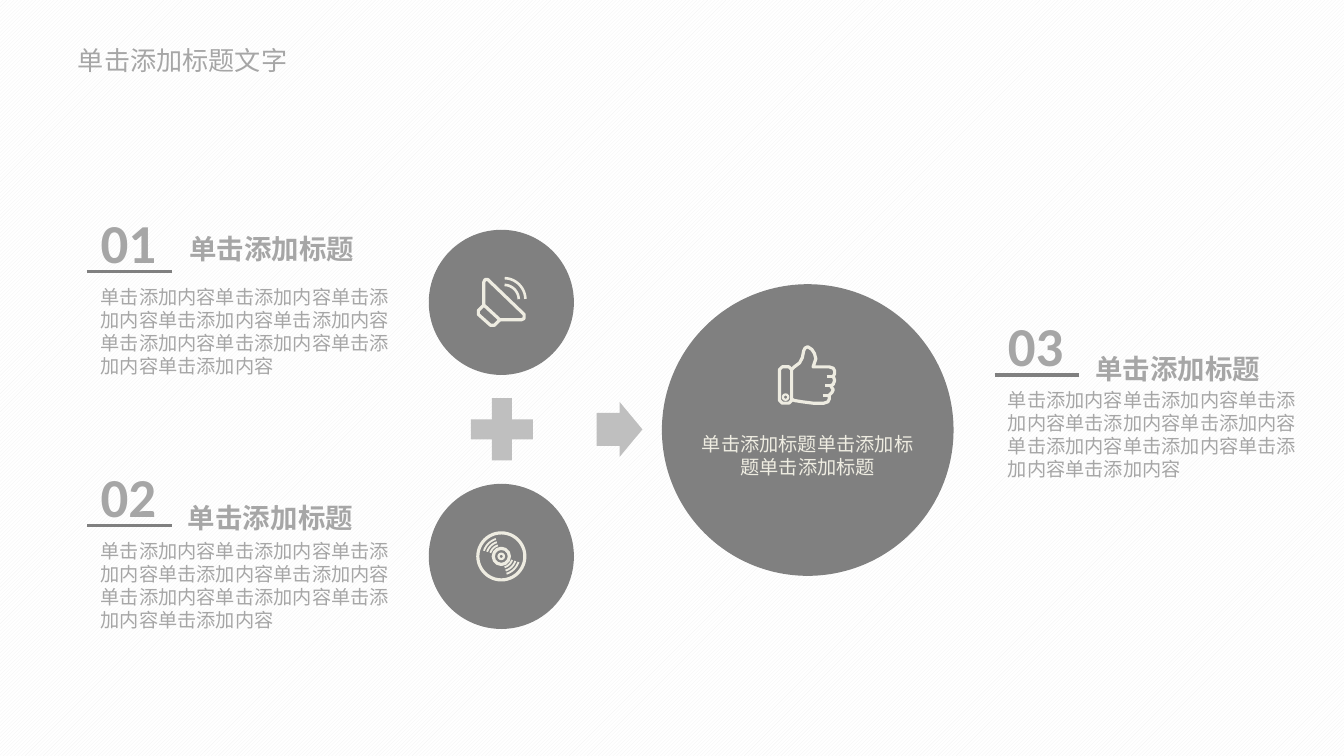
from math import cos, radians, sin
from pptx import Presentation, util as u
from pptx.dml.color import RGBColor
from pptx.enum import dml, shapes, text
from pptx.oxml.ns import qn

W = 10
H = W * 9 / 16
DARK, MID, GRAY, CREAM = "808080", "BFBFBF", "A6A6A6", "EEECE1"
BODY = "单击添加内容" * 9
HEADING = "单击添加标题"
CALIBRI = dict(name="Calibri")
TITLE = dict(name="Noto Sans CJK SC", size=14)
NUMBER = dict(CALIBRI, size=29.4, bold=True)
HEAD = dict(CALIBRI, size=14.7, bold=True)
SMALL = dict(CALIBRI, size=10.3)

# number, left, top, heading offset across and down
ITEMS = [
    ("01", 0.65, 1.5, 0.66, 0.18),
    ("02", 0.65, 3.39, 0.65, 0.29),
    ("03", 7.4, 2.27, 0.65, 0.3),
]
CIRCLES = [(3.73, 2.25, 0.54), (3.73, 4.14, 0.54), (6.01, 3.2, 1.085)]
RINGS = [(3.73, 4.14, 0.175, 1.7), (3.73, 4.14, 0.06, 1.7),
         (3.73, 4.14, 0.02, 1.2), (5.845, 2.955, 0.02, 1.2)]
ARCS = [(3.75, 2.23, r, 272, 358, 1.4) for r in (0.11, 0.16)]
ARCS += [(3.73, 4.14, r, a, a + 55, 1)
         for r in (0.085, 0.11, 0.135) for a in (18, 198)]
SPEAKER = [
    ([(3.6, 2.27), (3.6, 2.1), (3.61, 2.08), (3.63, 2.08), (3.64, 2.09),
      (3.9, 2.34), (3.9, 2.37), (3.88, 2.38), (3.72, 2.38)], True),
    ([(3.6, 2.27), (3.56, 2.31), (3.56, 2.34), (3.65, 2.42), (3.68, 2.42),
      (3.72, 2.38)], False),
]
THUMB = [
    ([(5.82, 2.73), (5.87, 2.73), (5.89, 2.75), (5.89, 2.98), (5.87, 3),
      (5.82, 3), (5.8, 2.98), (5.8, 2.75)], True),
    ([(5.89, 2.75), (5.91, 2.73), (5.95, 2.7), (5.97, 2.66), (5.98, 2.61),
      (5.99, 2.59), (6.01, 2.58), (6.04, 2.6), (6.06, 2.63), (6.07, 2.67),
      (6.05, 2.73), (6.17, 2.73), (6.2, 2.74), (6.21, 2.76), (6.21, 2.78),
      (6.2, 2.8), (6.21, 2.83), (6.2, 2.86), (6.18, 2.87), (6.2, 2.9),
      (6.19, 2.92), (6.17, 2.94), (6.17, 2.97), (6.16, 2.99), (6.13, 3),
      (6.05, 3), (5.97, 2.99), (5.91, 2.98), (5.89, 2.97)], False),
    ([(6.15, 2.8), (6.2, 2.8)], False),
    ([(6.14, 2.87), (6.18, 2.87)], False),
    ([(6.12, 2.94), (6.17, 2.94)], False),
]


def color(value):
    return RGBColor.from_string(value)


def paint(sp, fill=None, line=None, width=1.7):
    sp.shadow.inherit = False
    if fill:
        sp.fill.solid()
        sp.fill.fore_color.rgb = color(fill)
    else:
        sp.fill.background()
    if line:
        sp.line.color.rgb = color(line)
        sp.line.width = u.Pt(width)
    else:
        sp.line.fill.background()


def preset(kind, x, y, w, h, **style):
    sp = s.shapes.add_shape(kind, *map(u.Inches, (x, y, w, h)))
    paint(sp, **style)
    return sp


def circle(cx, cy, r, **style):
    preset(shapes.MSO_SHAPE.OVAL, cx - r, cy - r, 2 * r, 2 * r, **style)


def stroke(points, close=False, width=1.7):
    points = [(u.Inches(x), u.Inches(y)) for x, y in points]
    fb = s.shapes.build_freeform(*points[0])
    fb.add_line_segments(points[1:], close=close)
    paint(fb.convert_to_shape(), line=CREAM, width=width)


def arc(cx, cy, r, start, end, width):
    angles = [radians(start + (end - start) * i / 16) for i in range(17)]
    stroke([(cx + r * cos(a), cy + r * sin(a)) for a in angles], width=width)


def write(words, x, y, w, h, fmt, ink=GRAY, wrap=False, **frame):
    tf = s.shapes.add_textbox(*map(u.Inches, (x, y, w, h))).text_frame
    tf.word_wrap = wrap
    for key, value in frame.items():
        setattr(tf, key, value)
    p = tf.paragraphs[0]
    r = p.add_run()
    r.text = words
    for key, value in fmt.items():
        setattr(r.font, key, u.Pt(value) if key == "size" else value)
    r.font.color.rgb = color(ink)
    ea = r.font._element.makeelement(qn("a:ea"), {"typeface": fmt["name"]})
    r.font._element.append(ea)
    return p


def rule(x, y, w):
    ln = s.shapes.add_connector(shapes.MSO_CONNECTOR.STRAIGHT,
                                *map(u.Inches, (x, y, x + w, y)))
    ln.line.color.rgb = color(DARK)
    ln.line.width = u.Pt(2)
    props = ln._element.spPr
    props.append(props.makeelement(qn("a:effectLst"), {}))


prs = Presentation()
prs.slide_width, prs.slide_height = u.Inches(W), u.Inches(H)
s = prs.slides.add_slide(prs.slide_layouts[6])
bg = s.background.fill
bg.patterned()
bg.pattern = dml.MSO_PATTERN.LIGHT_UPWARD_DIAGONAL
bg.fore_color.rgb, bg.back_color.rgb = color("F2F2F2"), color("FFFFFF")

for place in CIRCLES:
    circle(*place, fill=DARK)
preset(shapes.MSO_SHAPE.MATH_PLUS, 3.42, 2.88, 0.63, 0.63, fill=MID)
arrow = preset(shapes.MSO_SHAPE.RIGHT_ARROW, 4.44, 2.99, 0.34, 0.41, fill=MID)
arrow.adjustments[0] = 0.6

for cx, cy, r, width in RINGS:
    circle(cx, cy, r, line=CREAM, width=width)
for curve in ARCS:
    arc(*curve)
for points, close in SPEAKER + THUMB:
    stroke(points, close)

p = write(HEADING * 3, 5.1, 3.17, 1.82, 0.45, SMALL, CREAM, True)
p.alignment = text.PP_ALIGN.CENTER

for number, x, y, dx, dy in ITEMS:
    write(number, x, y, 0.62, 0.6, NUMBER)
    rule(x, y + 0.52, 0.63)
    write(HEADING, x + dx, y + dy, 1.44, 0.35, HEAD)
    write(BODY, x, y + 0.57, 2.45, 0.79, SMALL, wrap=True)

write("单击添加标题文字", 0.51, 0.29, 1.72, 0.31, TITLE,
      margin_left=u.Inches(0.07), margin_right=u.Inches(0.07),
      margin_top=u.Inches(0.04), margin_bottom=u.Inches(0.04),
      vertical_anchor=text.MSO_ANCHOR.MIDDLE)
prs.save("out.pptx")
